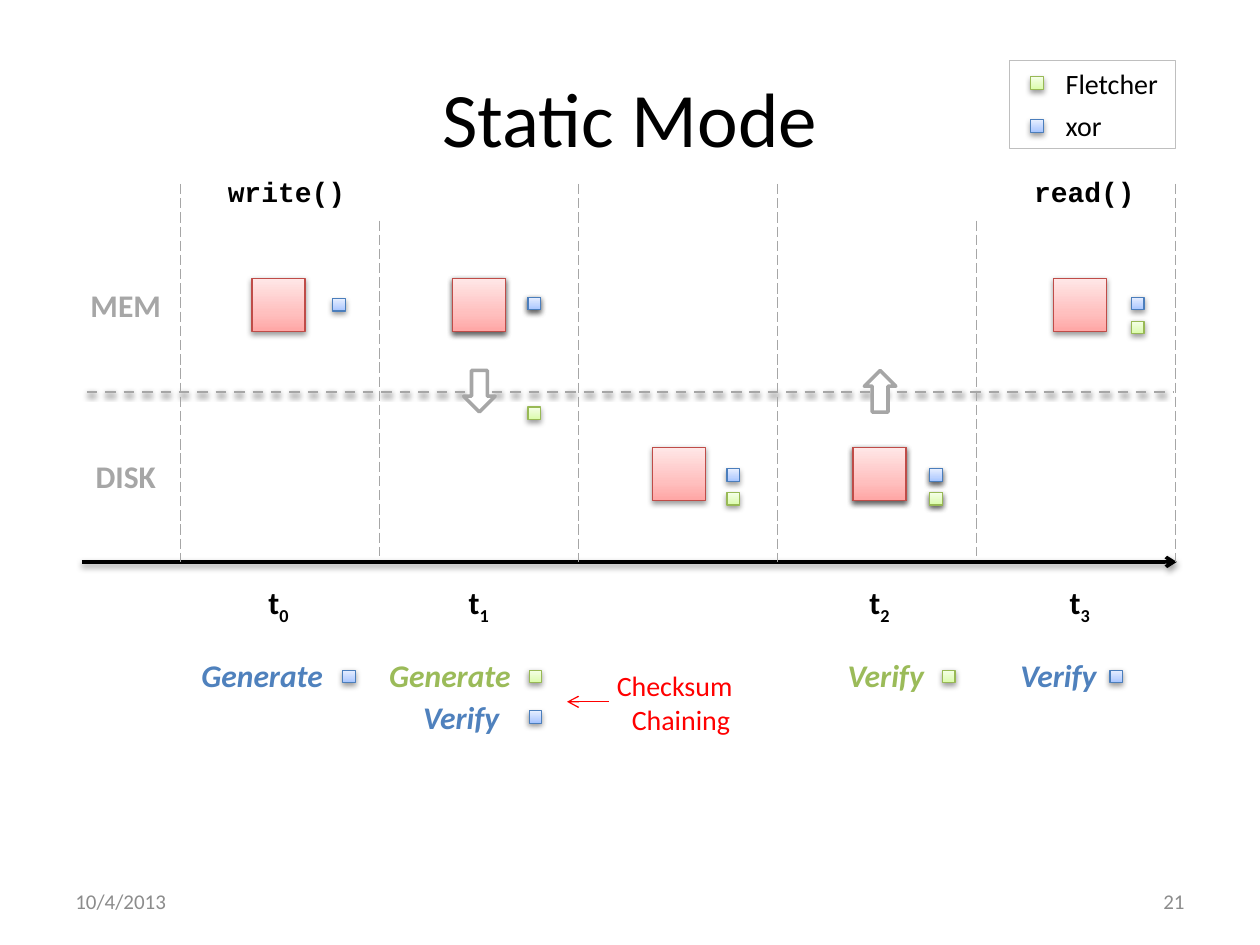
import copy
from dataclasses import dataclass, field
from typing import Any

import pptx
import pptx.dml.color
import pptx.enum.dml
import pptx.enum.shapes
import pptx.enum.text
import pptx.oxml
import pptx.oxml.ns
import pptx.util

Inches = pptx.util.Inches
Pt = pptx.util.Pt
Shape = pptx.enum.shapes.MSO_SHAPE
Dash = pptx.enum.dml.MSO_LINE
Align = pptx.enum.text.PP_ALIGN
Anchor = pptx.enum.text.MSO_ANCHOR
AutoSize = pptx.enum.text.MSO_AUTO_SIZE


@dataclass(frozen=True)
class Tint:
    line: str
    stops: tuple[str, str, str]


@dataclass(frozen=True)
class Theme:
    body_font: str = "Calibri"
    code_font: str = "Courier New"
    title_size: int = 44
    label_size: int = 18
    note_size: int = 16
    footer_size: int = 12
    black: str = "000000"
    white: str = "FFFFFF"
    gray: str = "A6A6A6"
    footer: str = "8C8C8C"
    legend_line: str = "BFBFBF"
    accent: str = "FF0000"
    xor: str = "4F81BD"
    fletcher: str = "9BBB59"
    data_tint: Tint = Tint("BF4C48", ("FFA6A5", "FFC0BF", "FFE7E7"))
    xor_tint: Tint = Tint("4B7EBC", ("A4C4FF", "BFD4FF", "E6EEFF"))
    fletcher_tint: Tint = Tint("98B955", ("DAFDA7", "E4FCC2", "F5FFE7"))


THEME = Theme()
STOP_POSITIONS = (0, 0.35, 1)
BLOCK_SIZE, CHIP_SIZE = 0.42, 0.1
MEMORY_TOP, DISK_TOP = 2.21, 3.55
AXIS_TOP = 4.46


@dataclass(frozen=True)
class Square:
    left: float
    top: float
    size: float
    tint: Tint
    layers: int = 1  # stacked layers deepen the shadow


@dataclass(frozen=True)
class Label:
    left: float
    top: float
    width: float
    height: float
    lines: tuple[str, ...]
    color: str = THEME.black
    size: int = THEME.label_size
    subscript: str = ""
    align: Any = Align.LEFT
    font: dict[str, Any] = field(default_factory=dict)
    frame: dict[str, Any] = field(default_factory=dict)


@dataclass(frozen=True)
class Rule:
    start: tuple[float, float]
    end: tuple[float, float]
    color: str
    width: float = 0.75
    dash: Any = None
    arrow: bool = False
    shadow: bool = False


def rgb(color: str) -> pptx.dml.color.RGBColor:
    return pptx.dml.color.RGBColor.from_string(color)


def set_attributes(target: Any, values: dict[str, Any]) -> None:
    for name, value in values.items():
        setattr(target, name, value)


def add_effects(shape: Any, shadow: bool) -> None:
    """Replace the inherited effects with a soft shadow below, or with none."""
    outer = (f'<a:outerShdw blurRad="{Pt(3.15)}" dist="{Pt(1.57)}" dir="5400000" rotWithShape="0">'
             f'<a:srgbClr val="{THEME.black}"><a:alpha val="38000"/></a:srgbClr></a:outerShdw>')
    shape.element.spPr.append(pptx.oxml.parse_xml(
        f'<a:effectLst {pptx.oxml.ns.nsdecls("a")}>{outer if shadow else ""}</a:effectLst>'))


def add_outlined(slide: Any, kind: Any, box: tuple[float, ...], line: str, width: float) -> Any:
    shape = slide.shapes.add_shape(kind, *map(Inches, box))
    shape.fill.solid()
    shape.fill.fore_color.rgb = rgb(THEME.white)
    shape.line.color.rgb = rgb(line)
    shape.line.width = Pt(width)
    return shape


def add_square(slide: Any, square: Square) -> None:
    for _ in range(square.layers):
        box = (square.left, square.top, square.size, square.size)
        shape = add_outlined(slide, Shape.RECTANGLE, box, square.tint.line, 0.75)
        shape.fill.gradient()
        shape.fill.gradient_angle = 90
        stop_list = shape.element.spPr.find(".//" + pptx.oxml.ns.qn("a:gsLst"))
        stop_list.append(copy.deepcopy(stop_list[0]))
        for stop, position, color in zip(shape.fill.gradient_stops, STOP_POSITIONS, square.tint.stops):
            stop.position = position
            stop.color.rgb = rgb(color)
        add_effects(shape, True)


def add_label(slide: Any, label: Label) -> None:
    box = slide.shapes.add_textbox(*map(Inches, (label.left, label.top, label.width, label.height)))
    frame = box.text_frame
    set_attributes(frame, {"word_wrap": True, "auto_size": AutoSize.SHAPE_TO_FIT_TEXT, **label.frame})
    for index, line in enumerate(label.lines):
        paragraph = frame.add_paragraph() if index else frame.paragraphs[0]
        paragraph.alignment = label.align
        for text, baseline in ((line, None), (label.subscript, "-25000")):
            if text:
                run = paragraph.add_run()
                run.text = text
                set_attributes(run.font, {"name": THEME.body_font, "size": Pt(label.size), **label.font})
                run.font.color.rgb = rgb(label.color)
                if baseline:
                    run.font._element.set("baseline", baseline)


def add_rule(slide: Any, rule: Rule) -> None:
    connector = slide.shapes.add_connector(
        pptx.enum.shapes.MSO_CONNECTOR.STRAIGHT, *map(Inches, rule.start + rule.end))
    connector.line.color.rgb = rgb(rule.color)
    set_attributes(connector.line, {"width": Pt(rule.width), "dash_style": rule.dash})
    if rule.arrow:
        connector.line._get_or_add_ln().append(
            pptx.oxml.parse_xml(f'<a:tailEnd {pptx.oxml.ns.nsdecls("a")} type="arrow"/>'))
    add_effects(connector, rule.shadow)


def column(index: int) -> float:
    """Left edge of the data block in a time step."""
    return 2 + 1.59 * index


def build_rules() -> list[Rule]:
    rules = [
        Rule((0.69, 3.11), (9.31, 3.11), THEME.gray, 1.5, Dash.DASH, shadow=True),
        Rule((0.65, AXIS_TOP), (9.34, AXIS_TOP), THEME.black, 2, arrow=True, shadow=True),
        Rule((4.83, 5.57), (4.5, 5.57), THEME.accent, arrow=True),
    ]
    for index in range(6):
        left = 1.43 + 1.58 * index
        top, bottom = (1.75, 4.41) if index in (1, 4) else (1.46, AXIS_TOP)
        rules.append(Rule((left, top), (left, bottom), THEME.gray, dash=Dash.LONG_DASH))
    return rules


def build_squares() -> list[Square]:
    blocks = [(0, MEMORY_TOP, 1), (1, MEMORY_TOP, 2), (2, DISK_TOP, 1), (3, DISK_TOP, 2), (4, MEMORY_TOP, 1)]
    xor_chips = [(2.64, 2.37, 1), (4.19, 2.36, 2), (5.77, 3.72, 1), (7.38, 3.72, 2), (8.98, 2.36, 1),
                 (2.72, 5.32, 1), (4.2, 5.64, 1), (8.81, 5.32, 1), (8.18, 0.95, 1)]
    fletcher_chips = [(4.19, 3.23, 1), (5.77, 3.91, 1), (7.38, 3.91, 2), (8.98, 2.55, 1),
                      (4.2, 5.32, 1), (7.48, 5.32, 1), (8.18, 0.61, 1)]
    squares = [Square(column(step), top, BLOCK_SIZE, THEME.data_tint, layers) for step, top, layers in blocks]
    for tint, chips in ((THEME.xor_tint, xor_chips), (THEME.fletcher_tint, fletcher_chips)):
        squares += [Square(left, top, CHIP_SIZE, tint, layers) for left, top, layers in chips]
    return squares


def build_labels() -> list[Label]:
    bold = {"bold": True}
    code = {"bold": True, "name": THEME.code_font}
    action = {"bold": True, "italic": True}
    fixed = {"auto_size": AutoSize.NONE, "vertical_anchor": Anchor.MIDDLE}
    unwrapped = {"word_wrap": False}
    labels = [
        Label(0.5, 0.3, 9, 1.25, ("Static Mode",), size=THEME.title_size, align=Align.CENTER, frame=fixed),
        Label(0.5, 6.95, 2.33, 0.4, ("10/4/2013",), THEME.footer, THEME.footer_size, frame=fixed),
        Label(7.17, 6.95, 2.33, 0.4, ("21",), THEME.footer, THEME.footer_size, align=Align.RIGHT, frame=fixed),
        Label(0.62, 2.22, 0.77, 0.4, ("MEM",), THEME.gray, font=bold, frame=unwrapped),
        Label(0.66, 3.58, 0.69, 0.4, ("DISK",), THEME.gray, font=bold, frame=unwrapped),
        Label(1.71, 1.34, 1.26, 0.37, ("write()",), size=THEME.note_size, font=code),
        Label(8.11, 1.34, 1.26, 0.37, ("read()",), size=THEME.note_size, font=code),
        Label(8.36, 0.48, 1.08, 0.37, ("Fletcher",), size=THEME.note_size),
        Label(8.36, 0.81, 0.92, 0.37, ("xor",), size=THEME.note_size),
        Label(4.76, 5.26, 1.24, 0.64, ("Checksum ", " Chaining"), THEME.accent, THEME.note_size, align=Align.CENTER),
    ]
    for time, step in enumerate((0, 1, 3, 4)):
        labels.append(Label(column(step), 4.58, 0.42, 0.42, ("t",), subscript=str(time),
                            align=Align.CENTER, font=bold))
    for left, top, width, text, color in (
        (1.5, 5.16, 1.18, "Generate", THEME.xor),
        (2.99, 5.16, 1.18, "Generate", THEME.fletcher),
        (3.26, 5.49, 0.83, "Verify", THEME.xor),
        (6.63, 5.16, 0.83, "Verify", THEME.fletcher),
        (8, 5.16, 0.83, "Verify", THEME.xor),
    ):
        labels.append(Label(left, top, width, 0.4, (text,), color, font=action))
    return labels


def main() -> None:
    presentation = pptx.Presentation()
    set_attributes(presentation, {"slide_width": Inches(10), "slide_height": Inches(7.5)})
    slide = presentation.slides.add_slide(presentation.slide_layouts[6])
    for rule in build_rules():
        add_rule(slide, rule)
    for left, rotation in ((3.68, 0), (6.86, 180)):
        arrow = add_outlined(slide, Shape.DOWN_ARROW, (left, 2.94, 0.25, 0.33), THEME.gray, 2)
        arrow.rotation = rotation
        add_effects(arrow, False)
    legend = add_outlined(slide, Shape.RECTANGLE, (8.01, 0.48, 1.32, 0.7), THEME.legend_line, 0.75)
    add_effects(legend, False)
    for square in build_squares():
        add_square(slide, square)
    for label in build_labels():
        add_label(slide, label)
    presentation.save("out.pptx")


if __name__ == "__main__":
    main()
